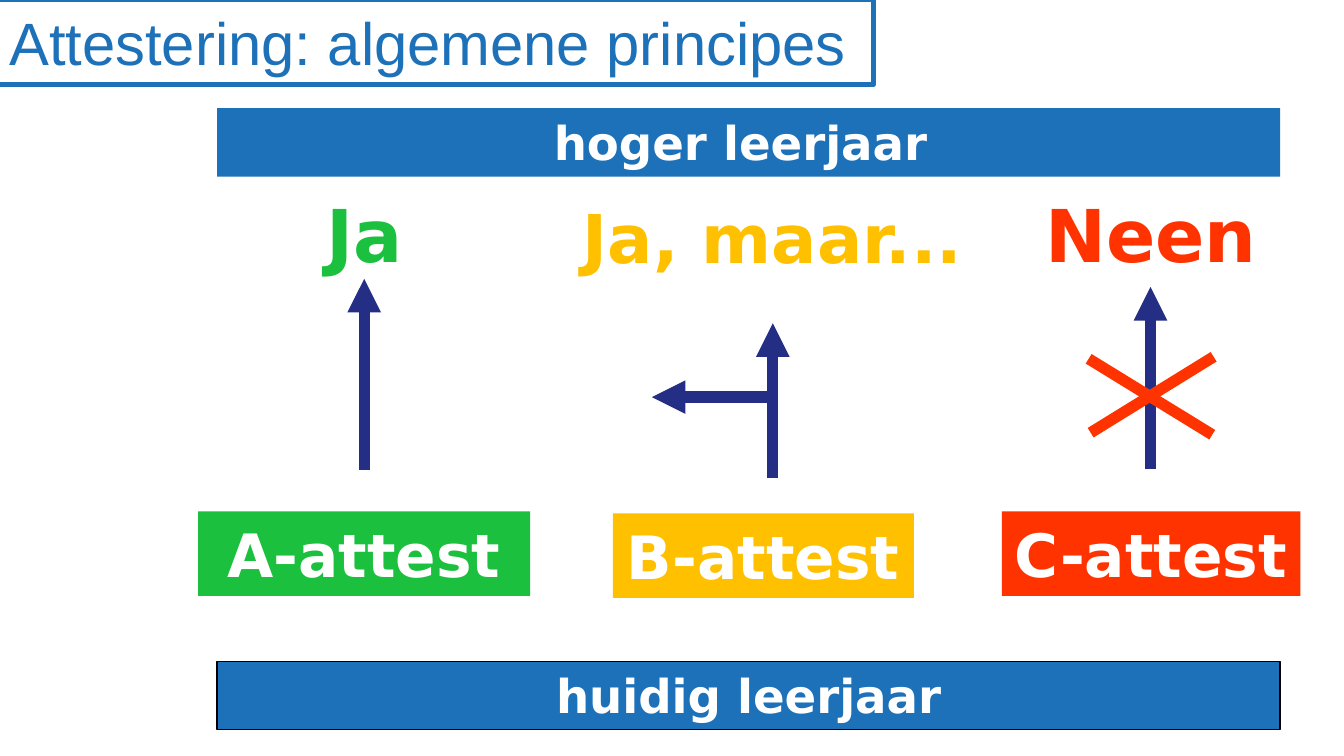
"""Build the slide on the general principles of attestation."""
import pptx
import pptx.dml.color
import pptx.enum.shapes
import pptx.enum.text
import pptx.oxml.ns
import pptx.util
from lxml import etree

EMU_PER_PX = 4572
BLUE, NAVY, WHITE, BLACK = "1D71B8", "232E84", "FFFFFF", "000000"
GREEN, AMBER, RED = "1CC03F", "FFC000", "FF3300"


def px(length):
    return pptx.util.Emu(length * EMU_PER_PX)


def rgb(value):
    return pptx.dml.color.RGBColor.from_string(value)


def write(holder, text, size, color, font="DejaVu Sans", bold=True,
          align=pptx.enum.text.PP_ALIGN.CENTER, wrap=True):
    frame = holder.text_frame
    frame.word_wrap = wrap
    frame.auto_size = pptx.enum.text.MSO_AUTO_SIZE.SHAPE_TO_FIT_TEXT
    frame.vertical_anchor = pptx.enum.text.MSO_ANCHOR.TOP
    frame.margin_left = frame.margin_right = px(18)
    frame.margin_top = frame.margin_bottom = px(9)
    paragraph = frame.paragraphs[0]
    paragraph.text = text
    paragraph.alignment = align
    paragraph.font.name = font
    paragraph.font.size = pptx.util.Pt(size)
    paragraph.font.bold = bold
    paragraph.font.color.rgb = rgb(color)


def add_box(slide, bounds, fill=None, border=None, weight=0.75):
    box = slide.shapes.add_shape(
        pptx.enum.shapes.MSO_SHAPE.RECTANGLE, *map(px, bounds))
    box.shadow.inherit = False
    if fill:
        box.fill.solid()
        box.fill.fore_color.rgb = rgb(fill)
    else:
        box.fill.background()
    if border:
        box.line.color.rgb = rgb(border)
        box.line.width = pptx.util.Pt(weight)
    else:
        box.line.fill.background()
    return box


def add_answer(slide, bounds, text, size, color):
    answer = slide.shapes.add_textbox(*map(px, bounds))
    write(answer, text, size, color)


def add_stroke(slide, start, end, color, arrow=False):
    stroke = slide.shapes.add_connector(
        pptx.enum.shapes.MSO_CONNECTOR.STRAIGHT, *map(px, start + end))
    stroke.line.color.rgb = rgb(color)
    stroke.line.width = pptx.util.Pt(6)
    qn = pptx.oxml.ns.qn
    if arrow:
        etree.SubElement(stroke.line._get_or_add_ln(), qn("a:tailEnd"), type="triangle")
    etree.SubElement(stroke._element.spPr, qn("a:effectLst"))


def main():
    deck = pptx.Presentation()
    deck.slide_width, deck.slide_height = px(2000), px(1125)
    slide = deck.slides.add_slide(deck.slide_layouts[6])

    for top, year, border in ((984, "huidig leerjaar", BLACK),
                              (161, "hoger leerjaar ", None)):
        write(add_box(slide, (323, top, 1582, 102), BLUE, border), year, 25, WHITE)

    for start, end in (((542, 699), (542, 415)), ((1712, 698), (1712, 427))):
        add_stroke(slide, start, end, NAVY, arrow=True)
    for start, end in (((1806, 531), (1623, 644)), ((1620, 534), (1804, 647))):
        add_stroke(slide, start, end, RED)

    add_answer(slide, (809, 283, 682, 140), "Ja, maar...", 36, AMBER)
    add_answer(slide, (1446, 273, 534, 148), "Neen", 39, RED)
    add_answer(slide, (402, 273, 282, 148), "Ja", 39, GREEN)

    for bounds, attest, color, wrap in (
            ((295, 761, 494, 126), "A-attest", GREEN, True),
            ((912, 764, 448, 126), "B-attest", AMBER, False),
            ((1491, 761, 444, 126), "C-attest", RED, False)):
        write(add_box(slide, bounds, color), attest, 32, WHITE, wrap=wrap)

    title = add_box(slide, (-4, 0, 1304, 126), border=BLUE, weight=2.25)
    write(title, "Attestering: algemene principes", 32, BLUE, font="Arial",
          bold=False, align=pptx.enum.text.PP_ALIGN.LEFT)

    for start, end in (((1150, 591), (970, 591)), ((1150, 712), (1150, 481))):
        add_stroke(slide, start, end, NAVY, arrow=True)

    deck.save("out.pptx")


if __name__ == "__main__":
    main()
